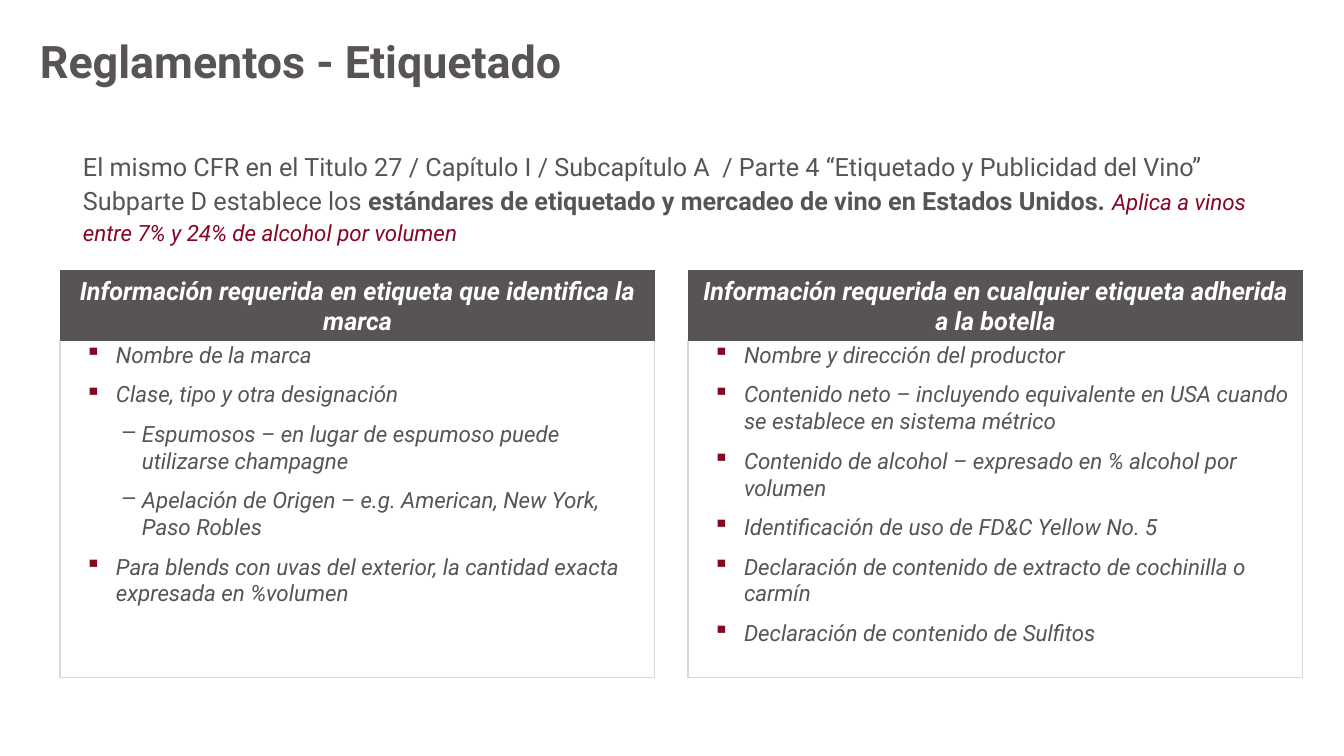
import lxml.etree
import pptx
import pptx.dml.color
import pptx.enum.shapes
import pptx.enum.text
import pptx.oxml.ns
import pptx.util
from dataclasses import dataclass

ALIGN = pptx.enum.text.PP_ALIGN
ANCHOR = pptx.enum.text.MSO_ANCHOR


@dataclass(frozen=True)
class Theme:
    font: str = "Roboto"
    ink: str = "595454"
    wine: str = "860724"
    white: str = "FFFFFF"
    edge: str = "D9D9D9"
    title: int = 32
    lead: int = 18
    body: int = 16


def px(n):
    """Turn px into EMU, at 1344 px to 13.33 inches."""
    return pptx.util.Emu(round(n * 12192000 / 1344))


def color(code):
    return pptx.dml.color.RGBColor.from_string(code)


class Deck:
    def __init__(self, theme):
        self.theme = theme
        self.file = pptx.Presentation()
        self.file.slide_width, self.file.slide_height = px(1344), px(756)
        self.slide = self.file.slides.add_slide(self.file.slide_layouts[6])

    def style(self, run, size, tint, bold=False, italic=False):
        font = run.font
        font.name, font.size = self.theme.font, pptx.util.Pt(size)
        font.bold, font.italic = bold, italic
        font.color.rgb = color(tint)

    def frame(self, shape, pads, anchor=ANCHOR.TOP):
        """Set wrapping, anchor and the left, top, right, bottom insets."""
        text = shape.text_frame
        text.word_wrap = True
        text.vertical_anchor = anchor
        text.margin_left, text.margin_top, text.margin_right, text.margin_bottom = map(px, pads)
        return text

    def text(self, box, parts, pads, space, after=0):
        """Add one paragraph; each part is its words and their style."""
        shape = self.slide.shapes.add_textbox(*map(px, box))
        para = self.frame(shape, pads).paragraphs[0]
        para.line_spacing = space
        para.space_after = pptx.util.Pt(after)
        for words, look in parts:
            run = para.add_run()
            run.text = words
            self.style(run, **look)

    def rect(self, box, fill=None, line=None):
        kind = pptx.enum.shapes.MSO_SHAPE.RECTANGLE
        shape = self.slide.shapes.add_shape(kind, *map(px, box))
        shape.shadow.inherit = False
        if fill:
            shape.fill.solid()
            shape.fill.fore_color.rgb = color(fill)
        else:
            shape.fill.background()
        if line:
            shape.line.color.rgb = color(line)
            shape.line.width = pptx.util.Pt(0.75)
        else:
            shape.line.fill.background()
        return shape

    def header(self, box, words):
        text = self.frame(self.rect(box, fill=self.theme.ink), (10, 5, 10, 5), ANCHOR.MIDDLE)
        text.text = words
        para = text.paragraphs[0]
        para.alignment = ALIGN.CENTER
        self.style(para.runs[0], self.theme.lead, self.theme.white, bold=True, italic=True)

    def bullet(self, para, sub):
        mark, tint, left, hang = ("–", self.theme.ink, 82, 19) if sub else ("▪", self.theme.wine, 56, 31)
        props = para._p.get_or_add_pPr()
        props.set("marL", str(px(left)))
        props.set("indent", str(px(-hang)))
        qn = pptx.oxml.ns.qn
        shade = lxml.etree.SubElement(props, qn("a:buClr"))
        lxml.etree.SubElement(shade, qn("a:srgbClr"), val=tint)
        lxml.etree.SubElement(props, qn("a:buChar"), char=mark)

    def bullets(self, box, items, right):
        """Draw a framed list; each item is its words and whether it is a sub-item."""
        text = self.frame(self.rect(box, line=self.theme.edge), (0, 0, right, 0))
        text.text = "\n".join(words for words, sub in items)
        for row, (para, (words, sub)) in enumerate(zip(text.paragraphs, items)):
            self.bullet(para, sub)
            para.alignment = ALIGN.LEFT
            para.space_before = pptx.util.Pt(9 if row else 0)
            self.style(para.runs[0], self.theme.body, self.theme.ink, italic=True)

    def panel(self, left, width, head, items, right):
        self.bullets((left, 341, width, 337), items, right)
        self.header((left, 270, width, 71), head)


BRAND = [
    ("Nombre de la marca", False),
    ("Clase, tipo y otra designación", False),
    ("Espumosos – en lugar de espumoso puede utilizarse champagne", True),
    ("Apelación de Origen – e.g. American, New York, Paso Robles", True),
    ("Para blends con uvas del exterior, la cantidad exacta expresada en %volumen", False),
]
BOTTLE = [
    ("Nombre y dirección del productor", False),
    ("Contenido neto – incluyendo equivalente en USA cuando se establece en sistema métrico", False),
    ("Contenido de alcohol – expresado en % alcohol por volumen", False),
    ("Identificación de uso de FD&C Yellow No. 5", False),
    ("Declaración de contenido de extracto de cochinilla o carmín", False),
    ("Declaración de contenido de Sulfitos", False),
]


def main():
    theme = Theme()
    deck = Deck(theme)
    plain = dict(size=theme.lead, tint=theme.ink)
    strong = dict(plain, bold=True)
    note = dict(size=theme.body, tint=theme.wine, italic=True)
    title = dict(size=theme.title, tint=theme.ink, bold=True)

    deck.text((40, 40, 1263, 101), [("Reglamentos - Etiquetado", title)], (0, 0, 0, 0), 0.9)
    deck.text((73, 142, 1231, 112), [
        ("El mismo CFR en el Titulo 27 / Capítulo I / Subcapítulo A  / Parte 4 "
         "“Etiquetado y Publicidad del Vino” Subparte D establece los", plain),
        (" estándares de etiquetado y mercadeo de vino en Estados Unidos. ", strong),
        ("Aplica a vinos entre 7% y 24% de alcohol por volumen", note),
    ], (10, 5, 10, 5), 1.14, after=6)
    deck.panel(60, 595, "Información requerida en etiqueta que identifica la marca", BRAND, 10)
    deck.panel(688, 615, "Información requerida en cualquier etiqueta adherida a la botella", BOTTLE, 0)
    deck.file.save("out.pptx")


if __name__ == "__main__":
    main()
